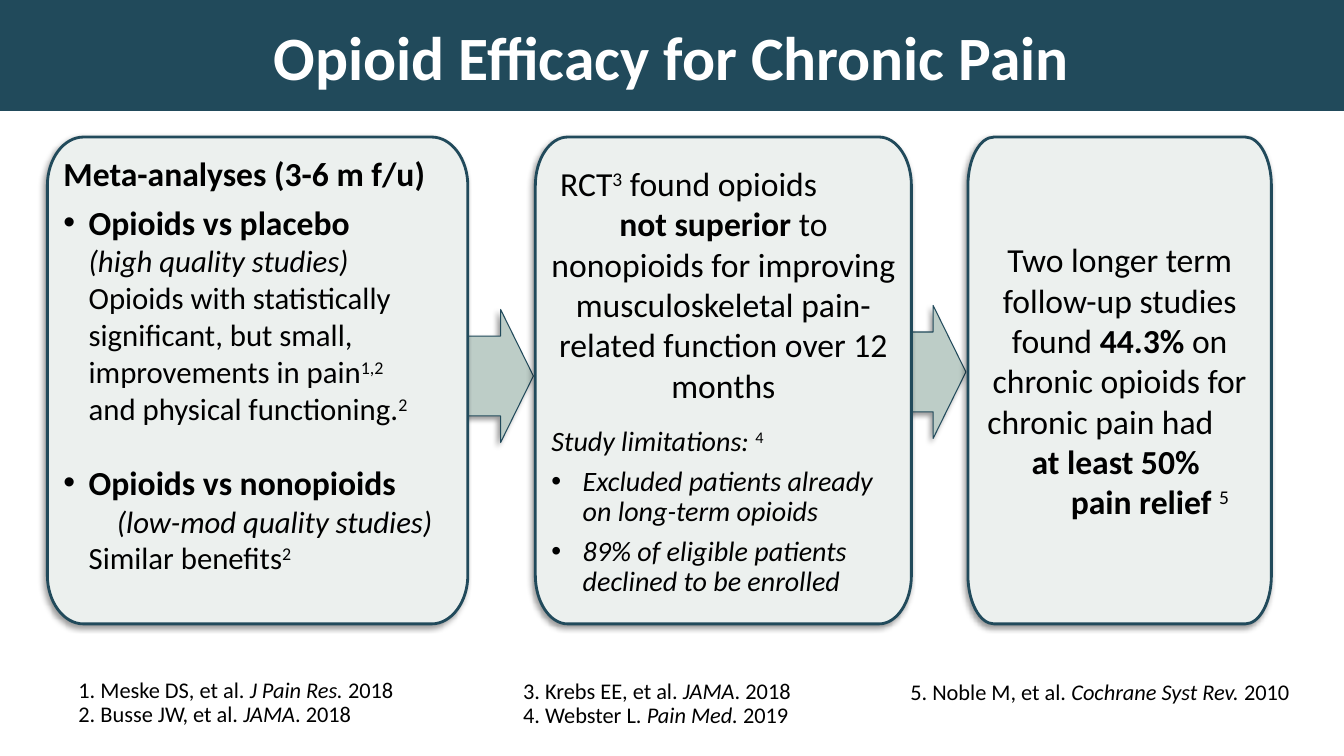
import math

from lxml import etree
from pptx import Presentation
from pptx.dml.color import RGBColor
from pptx.enum.shapes import MSO_SHAPE
from pptx.enum.text import MSO_ANCHOR, MSO_AUTO_SIZE, PP_ALIGN
from pptx.oxml.ns import qn
from pptx.util import Emu, Inches, Pt

TOP, MIDDLE = MSO_ANCHOR.TOP, MSO_ANCHOR.MIDDLE
LEFT, CENTER = PP_ALIGN.LEFT, PP_ALIGN.CENTER
RIGHT_ARROW = MSO_SHAPE.RIGHT_ARROW

TITLE_ONLY = 5

COLORS = {"navy": "214A5B", "card": "ECF0EE", "arrow": "BDCDC7",
          "text": "000000", "title": "FFFFFF", "shadow": "000000"}
FONT = "Calibri"
WIDTH, HEIGHT = 13.33, 7.5
CARD_TOP, CARD_HEIGHT = 1.36, 4.83
CORNER_X, CORNER_Y = 0.086, 0.1  # corner radii as shares of the card's size
ARC = 0.55  # handle length of a quarter arc, as a share of its radius
SIDE_INSET, TOP_INSET = 0.15, 0.16

# Run styles: b bold, i italic, s superscript
# Paragraph: (runs, format values)
BULLET = {"bullet": True, "left": 0.26, "indent": -0.25}
DETAIL = {"size": 22, "left": 0.26}
LIMIT = {"size": 20, "line_spacing": 0.9, "space_after": Pt(7), "left": 0.01}
LIMIT_BULLET = {**LIMIT, "bullet": True, "left": 0.32, "indent": -0.31}
CENTERED = {"alignment": CENTER}

META_ANALYSES = [
    ([("Meta-analyses (3-6 m f/u)", "b")], {"left": 0.01}),
    ([("Opioids vs placebo", "b")], {**BULLET, "space_before": Pt(6)}),
    ([("(high quality studies)", "i")], DETAIL),
    ([("Opioids with statistically significant, but small, improvements in pain", ""),
      ("1,2", "s")], DETAIL),
    ([("and physical functioning.", ""), ("2", "s")], DETAIL),
    ([("Opioids vs nonopioids", "b")], {**BULLET, "space_before": Pt(25)}),
    ([("(low-mod quality studies)", "i")], {**DETAIL, "left": 0.54}),
    ([("Similar benefits", ""), ("2", "s")], DETAIL),
]
TRIAL = [
    ([("RCT", ""), ("3", "s"), (" found opioids", "")], {**CENTERED, "right": 0.69}),
    ([("not superior ", "b"),
      ("to nonopioids for improving musculoskeletal pain-related function over 12 months", "")],
     {**CENTERED, "space_after": Pt(16)}),
    ([("Study limitations: ", "i"), ("4", "s")], LIMIT),
    ([("Excluded patients already on long-term opioids", "i")], LIMIT_BULLET),
    ([("89% of eligible patients declined to be enrolled", "i")],
     {**LIMIT_BULLET, "space_after": Pt(0)}),
]
FOLLOW_UP = [
    ([("Two longer term follow-up studies found ", ""), ("44.3% ", "b"),
      ("on chronic opioids for", "")], CENTERED),
    ([("chronic pain had", "")], {**CENTERED, "right": 0.38}),
    ([("at least 50%", "b")], {**CENTERED, "right": 0.08}),
    ([("pain relief ", "b"), ("5", "s")], {**CENTERED, "left": 0.6}),
]
# Left, width, anchor, paragraphs
CARDS = [(0.47, 4.17, TOP, META_ANALYSES), (5.31, 3.73, MIDDLE, TRIAL),
         (9.6, 3.01, MIDDLE, FOLLOW_UP)]
ARROWS = [(8.93, 3.03), (4.64, 3.07)]
# Left, top, width, references as (author, journal, year)
REFERENCES = [
    (0.68, 6.69, 3.37, [("1. Meske DS, et al. ", "J Pain Res. ", "2018"),
                        ("2. Busse JW, et al. ", "JAMA", ". 2018")]),
    (5.09, 6.7, 2.89, [("3. Krebs EE, et al. ", "JAMA", ". 2018"),
                       ("4. Webster L. ", "Pain Med. ", "2019")]),
    (8.93, 6.71, 4.01, [("5. Noble M, et al. ", "Cochrane Syst Rev. ", "2010")]),
]


def color(name):
    return RGBColor.from_string(COLORS[name])


def apply(target, values):
    for name, value in values.items():
        setattr(target, name, value)


def add_run(paragraph, text, style, size, color_name):
    run = paragraph.add_run()
    run.text = text
    apply(run.font, {"name": FONT, "size": Pt(size),
                     "bold": "b" in style, "italic": "i" in style})
    run.font.color.rgb = color(color_name)
    if "s" in style:
        run._r.get_or_add_rPr().set("baseline", "30000")


def write(frame, paragraphs, color_name="text"):
    for index, (runs, values) in enumerate(paragraphs):
        paragraph = frame.add_paragraph() if index else frame.paragraphs[0]
        values = {"alignment": LEFT, **values}
        size = values.pop("size", 24)
        properties = paragraph._p.get_or_add_pPr()
        bullet = values.pop("bullet", False)
        for key, attribute in (("left", "marL"), ("right", "marR"), ("indent", "indent")):
            properties.set(attribute, str(Inches(values.pop(key, 0))))
        apply(paragraph, values)
        if bullet:
            etree.SubElement(properties, qn("a:buFont")).set("typeface", "Arial")
            etree.SubElement(properties, qn("a:buChar")).set("char", "•")
        for text, style in runs:
            add_run(paragraph, text, style, size, color_name)


def paint(shape, fill, line_width):
    shape.fill.solid()
    shape.fill.fore_color.rgb = color(fill)
    shape.line.color.rgb = color("navy")
    shape.line.width = Pt(line_width)
    # Soft shadow to the lower left
    shape.shadow.inherit = False
    effects = shape._element.spPr.find(qn("a:effectLst"))
    shadow = etree.SubElement(effects, qn("a:outerShdw"), blurRad=str(Pt(4)),
                              dist=str(Pt(3)), dir="8100000", rotWithShape="0")
    tint = etree.SubElement(shadow, qn("a:srgbClr"), val=COLORS["shadow"])
    etree.SubElement(tint, qn("a:alpha"), val="40000")


def card_outline(left, width):
    """Four points per corner, clockwise: entry, two curve handles, exit."""
    radius_x, radius_y = width * CORNER_X, CARD_HEIGHT * CORNER_Y
    points = []
    for corner, (side_x, side_y) in enumerate([(1, 1), (-1, 1), (-1, -1), (1, -1)]):
        center_x = left + width / 2 + side_x * (width / 2 - radius_x)
        center_y = CARD_TOP + CARD_HEIGHT / 2 + side_y * (CARD_HEIGHT / 2 - radius_y)
        for quarter, handle in ((corner, 0), (corner, ARC), (corner + 1, -ARC), (corner + 1, 0)):
            cosine, sine = math.cos(quarter * math.pi / 2), math.sin(quarter * math.pi / 2)
            points.append((Inches(center_x + radius_x * (cosine - handle * sine)),
                           Inches(center_y + radius_y * (sine + handle * cosine))))
    return points


def curve_corners(card):
    """Join the three segments of each corner into one curve."""
    segments = list(card._element.iter(qn("a:lnTo")))
    for first in range(0, 15, 4):
        curve = etree.Element(qn("a:cubicBezTo"))
        segments[first].addprevious(curve)
        for segment in segments[first:first + 3]:
            curve.append(segment[0])
            segment.getparent().remove(segment)


def add_card(slide, left, width, anchor, paragraphs):
    start, *others = card_outline(left, width)
    builder = slide.shapes.build_freeform(*start)
    builder.add_line_segments(others, close=True)
    card = builder.convert_to_shape(Emu(0), Emu(0))
    curve_corners(card)
    paint(card, "card", 2)
    apply(card.text_frame, {"word_wrap": True, "vertical_anchor": anchor,
                            "margin_left": Inches(SIDE_INSET), "margin_right": Inches(SIDE_INSET),
                            "margin_top": Inches(TOP_INSET), "margin_bottom": Inches(TOP_INSET)})
    write(card.text_frame, paragraphs)


def add_arrow(slide, left, top):
    arrow = slide.shapes.add_shape(RIGHT_ARROW, Inches(left), Inches(top),
                                   Inches(0.65), Inches(1.32))
    arrow.adjustments[0], arrow.adjustments[1] = 0.6, 0.5
    paint(arrow, "arrow", 0.75)


def add_references(slide, left, top, width, references):
    height = 0.1 + 0.245 * len(references)
    box = slide.shapes.add_textbox(Inches(left), Inches(top), Inches(width), Inches(height))
    apply(box.text_frame, {"word_wrap": False, "auto_size": MSO_AUTO_SIZE.SHAPE_TO_FIT_TEXT})
    write(box.text_frame, [(list(zip(reference, ("", "i", ""))),
                            {"size": 16, "line_spacing": 0.9}) for reference in references])


def format_title(slide):
    title = slide.shapes.title
    apply(title, {"left": 0, "top": 0, "width": Inches(WIDTH), "height": Inches(1.1)})
    title.fill.solid()
    title.fill.fore_color.rgb = color("navy")
    apply(title.text_frame, {"vertical_anchor": MIDDLE, "auto_size": MSO_AUTO_SIZE.NONE})
    write(title.text_frame, [([("Opioid Efficacy for Chronic Pain", "b")],
                              {"size": 44, **CENTERED})], "title")


def main():
    presentation = Presentation()
    presentation.slide_width, presentation.slide_height = Inches(WIDTH), Inches(HEIGHT)
    slide = presentation.slides.add_slide(presentation.slide_layouts[TITLE_ONLY])
    format_title(slide)
    # Arrows lie behind the cards
    for arrow in ARROWS:
        add_arrow(slide, *arrow)
    for card in CARDS:
        add_card(slide, *card)
    for references in REFERENCES:
        add_references(slide, *references)
    presentation.save("out.pptx")


if __name__ == "__main__":
    main()
